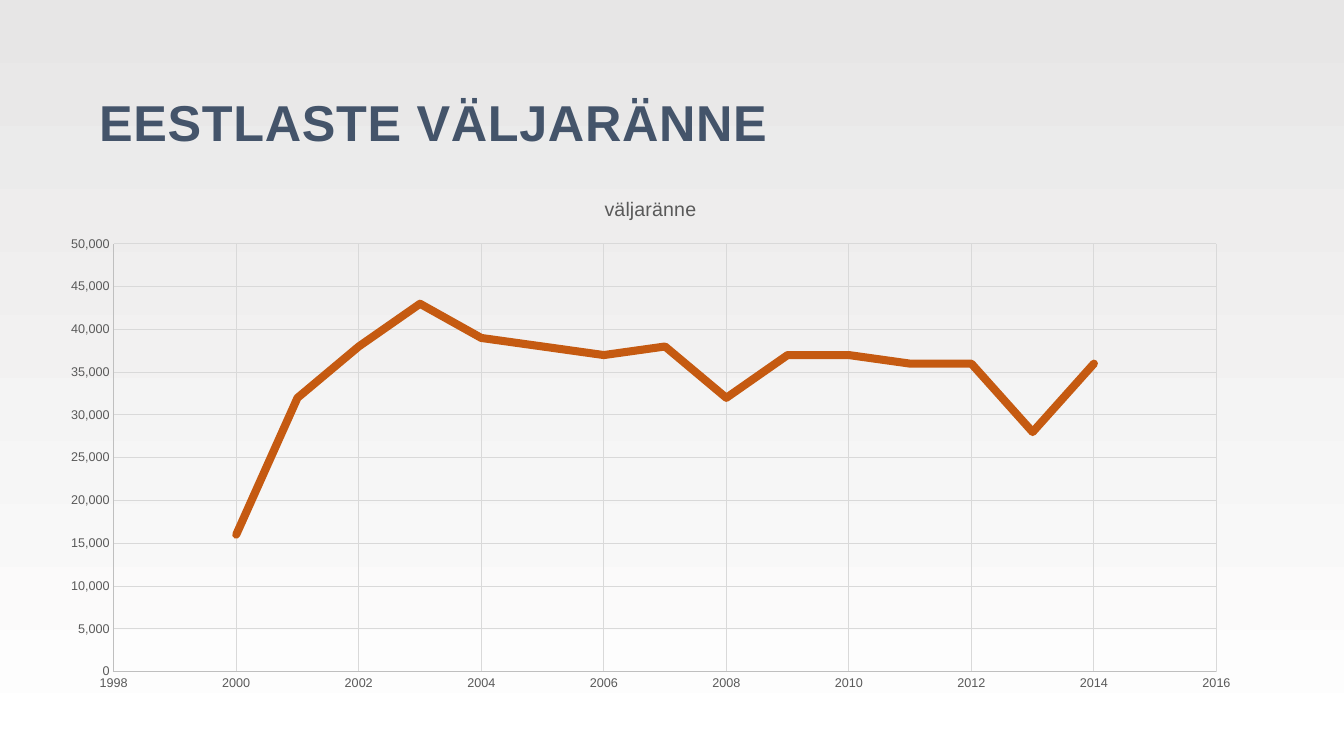
from lxml import etree
from pptx import Presentation
from pptx import util as u
from pptx.chart.data import XyChartData
from pptx.dml.color import RGBColor
from pptx.enum import chart as ch, text
from pptx.oxml.ns import qn

TITLE = "EESTLASTE VÄLJARÄNNE"
SERIES = "väljaränne"
FIRST_YEAR = 2000
EMIGRANTS = [16000, 32000, 38000, 43000, 39000, 38000, 37000, 38000,
             32000, 37000, 37000, 36000, 36000, 28000, 36000]
YEAR_SCALE = (1998, 2016, 2, "0")
COUNT_SCALE = (0, 50000, 5000, "#,##0")

# left, top, width, height in cm
TITLE_BOX = (2.25, 0.76, 29.36, 3.18)
CHART_BOX = (1.18, 4.45, 30.43, 13.21)
# percent of the chart area
PLOT_AREA = {"x": 5.54, "y": 12.85, "w": 91.33, "h": 81.6}

THEME = {
    "font": "Arial",
    "title": "44546A", "label": "595959", "series": "C55A11",
    "axis": "BFBFBF", "grid": "D9D9D9",
    "bg_top": "E7E6E6", "bg_bottom": "FFFFFF",
    "title_size": 36, "chart_title_size": 14, "label_size": 9,
    "series_width": 5.75, "thin_width": 0.75,
}


def color(name):
    return RGBColor.from_string(THEME[name])


def style_font(font, size, fill, bold=False):
    font.name = THEME["font"]
    font.size = u.Pt(THEME[size])
    font.bold = bold
    font.color.rgb = color(fill)


def write(tf, content, size, fill, bold=False, spacing=None):
    """Put one formatted run into a text frame; spacing is in points."""
    r = tf.paragraphs[0].add_run()
    r.text = content
    style_font(r.font, size, fill, bold)
    if spacing:
        r.font._element.set("spc", str(int(spacing * 100)))


def style_line(line, fill, width="thin_width"):
    line.color.rgb = color(fill)
    line.width = u.Pt(THEME[width])


def style_axis(axis, scale):
    axis.minimum_scale, axis.maximum_scale, axis.major_unit, number_format = scale
    axis.has_major_gridlines = True
    axis.major_tick_mark = axis.minor_tick_mark = ch.XL_TICK_MARK.NONE
    labels = axis.tick_labels
    labels.number_format = number_format
    labels.number_format_is_linked = False
    style_font(labels.font, "label_size", "label")
    style_line(axis.format.line, "axis")
    style_line(axis.major_gridlines.format.line, "grid")


def fix_plot_area(chart):
    """Place the inner plot area by percent of the chart."""
    plot_area = chart._chartSpace.chart.plotArea
    for old in plot_area.findall(qn("c:layout")):
        plot_area.remove(old)
    layout = etree.Element(qn("c:layout"))
    manual = etree.SubElement(layout, qn("c:manualLayout"))
    shares = {tag: percent / 100 for tag, percent in PLOT_AREA.items()}
    settings = {"layoutTarget": "inner", "xMode": "edge", "yMode": "edge", **shares}
    for tag, value in settings.items():
        etree.SubElement(manual, qn("c:" + tag)).set("val", str(value))
    plot_area.insert(0, layout)


def add_background(slide):
    fill = slide.background.fill
    fill.gradient()
    fill.gradient_angle = 270
    for stop, name, position in zip(fill.gradient_stops, ("bg_top", "bg_bottom"), (0, 1)):
        stop.color.rgb = color(name)
        stop.position = position


def add_title(slide):
    tf = slide.shapes.add_textbox(*map(u.Cm, TITLE_BOX)).text_frame
    tf.word_wrap = True
    tf.vertical_anchor = text.MSO_ANCHOR.BOTTOM
    write(tf, TITLE, "title_size", "title", bold=True, spacing=0.5)


def add_emigration_chart(slide):
    data = XyChartData()
    points = data.add_series(SERIES)
    for year, count in enumerate(EMIGRANTS, FIRST_YEAR):
        points.add_data_point(year, count)
    chart = slide.shapes.add_chart(ch.XL_CHART_TYPE.XY_SCATTER_LINES_NO_MARKERS,
                                   *map(u.Cm, CHART_BOX), data).chart
    style_font(chart.font, "label_size", "label")
    chart.has_legend = False
    chart.has_title = True
    write(chart.chart_title.text_frame, SERIES, "chart_title_size", "label")
    chart.chart_title.include_in_layout = False
    style_axis(chart.category_axis, YEAR_SCALE)
    style_axis(chart.value_axis, COUNT_SCALE)
    fix_plot_area(chart)

    plot = chart.plots[0]
    plot.vary_by_categories = False
    series = plot.series[0]
    series.marker.style = ch.XL_MARKER_STYLE.NONE
    for smooth in series._element.findall(qn("c:smooth")):
        smooth.set("val", "0")
    style_line(series.format.line, "series", "series_width")
    ln = series._element.find(qn("c:spPr")).find(qn("a:ln"))
    ln.set("cap", "rnd")
    etree.SubElement(ln, qn("a:round"))


def main():
    prs = Presentation()
    prs.slide_width, prs.slide_height = u.Cm(33.87), u.Cm(19.05)
    slide = prs.slides.add_slide(prs.slide_layouts[6])
    add_background(slide)
    add_title(slide)
    add_emigration_chart(slide)
    prs.save("out.pptx")


if __name__ == "__main__":
    main()
